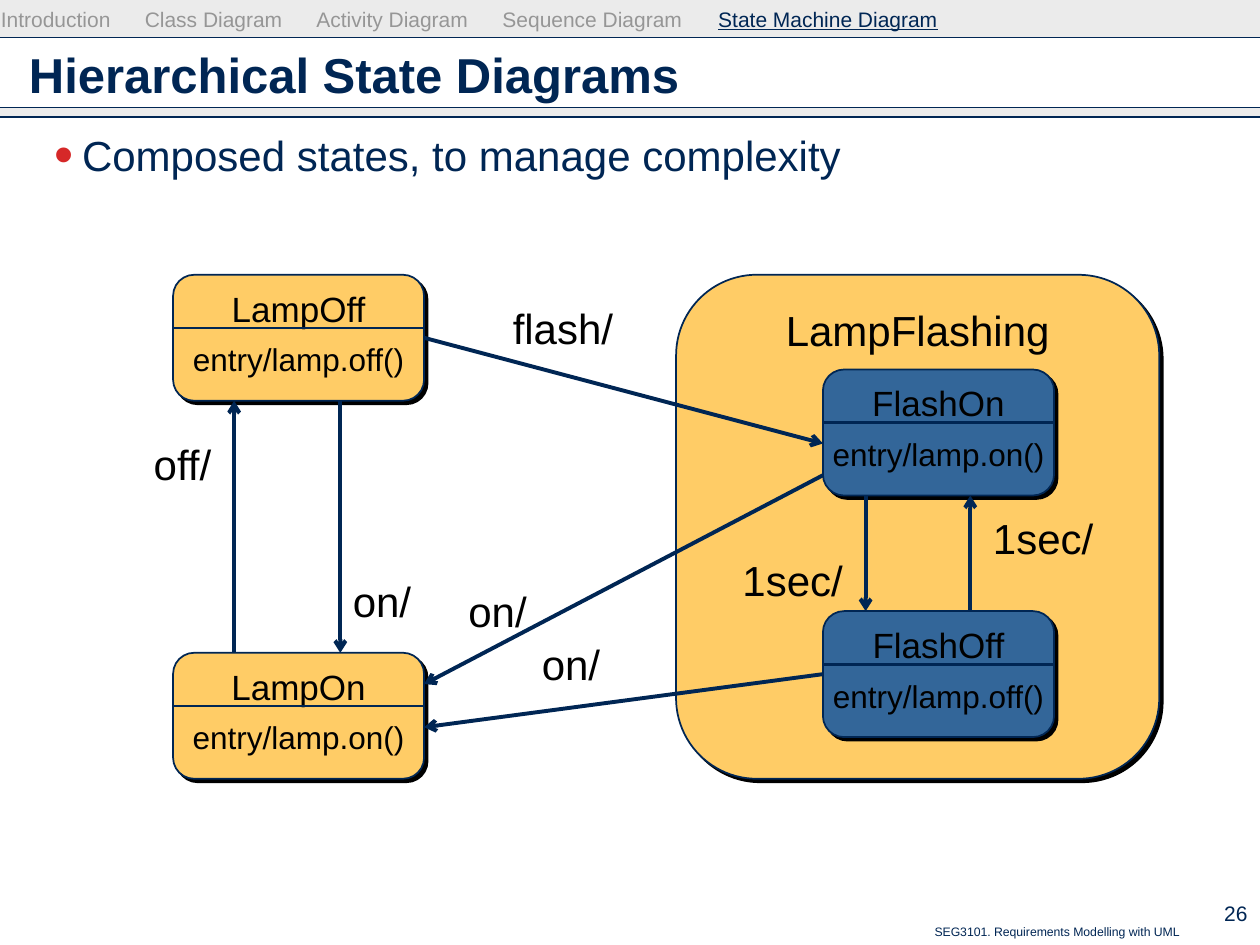
from pptx import Presentation
from pptx.dml.color import RGBColor
from pptx.enum.shapes import MSO_CONNECTOR, MSO_SHAPE
from pptx.enum.text import MSO_ANCHOR, MSO_AUTO_SIZE, PP_ALIGN
from pptx.oxml import parse_xml
from pptx.oxml.ns import nsdecls
from pptx.util import Cm, Pt

STRAIGHT = MSO_CONNECTOR.STRAIGHT
RECTANGLE, ROUNDED = MSO_SHAPE.RECTANGLE, MSO_SHAPE.ROUNDED_RECTANGLE
TOP, MIDDLE = MSO_ANCHOR.TOP, MSO_ANCHOR.MIDDLE
LEFT, CENTER, RIGHT = PP_ALIGN.LEFT, PP_ALIGN.CENTER, PP_ALIGN.RIGHT
NO_AUTOFIT = MSO_AUTO_SIZE.NONE
SIDE_LEFT, SIDE_RIGHT = 1, 3

FONT = "Arial"
COLORS = {
    "navy": "002654", "band": "CDCDCD", "muted": "969696", "bullet": "D62828",
    "amber": "FFCC66", "blue": "336699", "black": "000000",
}
WIDTH, HEIGHT = 25.4, 19.05
STATE_HEIGHT = 2.54
ACTION_WIDTH, ACTION_HEIGHT = 5.2, 1.02
SECTIONS = ["Introduction", "Class Diagram", "Activity Diagram",
            "Sequence Diagram", "State Machine Diagram"]
SECTION_TABS = [2.9, 6.36, 10.11, 14.46]

STATES = [
    ("LampOff", "entry/lamp.off()", 3.49, 5.54, 5.06, "amber"),
    ("LampOn", "entry/lamp.on()", 3.49, 13.16, 5.06, "amber"),
    ("FlashOn", "entry/lamp.on()", 16.59, 7.45, 4.66, "blue"),
    ("FlashOff", "entry/lamp.off()", 16.59, 12.32, 4.66, "blue"),
]
TRANSITIONS = [
    ((8.55, 6.81), (16.59, 8.94), "flash/", (11.35, 6.6)),
    ((17.45, 9.99), (17.45, 12.32), "1sec/", (15.98, 11.68)),
    ((19.56, 12.32), (19.56, 9.99), "1sec/", (21.03, 10.85)),
    ((4.72, 13.16), (4.72, 8.08), "off/", (3.68, 9.35)),
    ((6.86, 8.08), (6.86, 13.16), "on/", (7.7, 12.12)),
    ((16.59, 13.59), (8.55, 14.66), "on/", (11.51, 13.39)),
    ((16.59, 9.58), (8.55, 13.79), "on/", (10.03, 12.32)),
]


def rgb(name):
    """Return the named colour."""
    return RGBColor.from_string(COLORS[name])


def format_font(font, size, color, bold=False):
    """Set the face, size, colour and weight of a font."""
    font.name, font.size, font.bold = FONT, Pt(size), bold
    font.color.rgb = rgb(color)


def write(shape, text, size, color, align=CENTER, anchor=MIDDLE, wrap=False):
    """Write one formatted paragraph into a shape and return it."""
    frame = shape.text_frame
    frame.text = text
    frame.word_wrap = wrap
    frame.vertical_anchor = anchor
    paragraph = frame.paragraphs[0]
    paragraph.alignment = align
    for run in paragraph.runs:
        format_font(run.font, size, color)
    return paragraph


def add_label(slide, text, box, size, color, align=CENTER, anchor=MIDDLE):
    """Add an unwrapped text box."""
    label = slide.shapes.add_textbox(*map(Cm, box))
    write(label, text, size, color, align, anchor)


def add_line(slide, start, end, width, arrow=False):
    """Add a straight line, with an arrowhead at its end if asked."""
    line = slide.shapes.add_connector(STRAIGHT, *map(Cm, start + end))
    line.line.color.rgb = rgb("navy")
    line.line.width = Pt(width)
    if arrow:
        line.line._get_or_add_ln().append(
            parse_xml(f'<a:tailEnd {nsdecls("a")} type="arrow"/>'))
    line._element.spPr.append(parse_xml(f'<a:effectLst {nsdecls("a")}/>'))
    return line


def add_band(slide, top, height):
    """Add a translucent band across the slide."""
    band = slide.shapes.add_shape(RECTANGLE, 0, Cm(top), Cm(WIDTH), Cm(height))
    band.shadow.inherit = False
    band.fill.solid()
    band.fill.fore_color.rgb = rgb("band")
    band.line.fill.background()
    color = band._element.spPr.find(".//{*}srgbClr")
    color.append(parse_xml(f'<a:alpha {nsdecls("a")} val="40000"/>'))


def add_rounded_box(slide, name, box, fill, size):
    """Add a named rounded box with a hard shadow."""
    shape = slide.shapes.add_shape(ROUNDED, *map(Cm, box))
    shape.adjustments[0] = 0.167
    shape.fill.solid()
    shape.fill.fore_color.rgb = rgb(fill)
    shape.line.color.rgb = rgb("navy")
    shape.line.width = Pt(1)
    shape._element.spPr.append(parse_xml(
        f'<a:effectLst {nsdecls("a")}><a:outerShdw dist="{Pt(2.8)}" dir="2700000" '
        f'algn="ctr" rotWithShape="0"><a:srgbClr val="{COLORS["black"]}"/>'
        '</a:outerShdw></a:effectLst>'))
    write(shape, name, size, "black", anchor=TOP)
    return shape


def add_state(slide, name, action, left, top, width, fill):
    """Add a state with its name, divider and entry action."""
    box = (left, top, width, STATE_HEIGHT)
    shape = add_rounded_box(slide, name, box, fill, 20)
    divider = top + 1.07
    add_line(slide, (left, divider), (left + width, divider), 1.5)
    action_left = left + (width - ACTION_WIDTH) / 2
    action_box = (action_left, top + 1.19, ACTION_WIDTH, ACTION_HEIGHT)
    add_label(slide, action, action_box, 18, "black")
    return shape


def add_transition(slide, start, end, text, center):
    """Add an arrow and its label, which is centred on a point."""
    arrow = add_line(slide, start, end, 2.25, arrow=True)
    width, height = 2.54, 1.27
    x, y = center
    box = (x - width / 2, y - height / 2, width, height)
    add_label(slide, text, box, 24, "black")
    return arrow


def add_navigation(slide):
    """Add the section names, with the current one underlined."""
    bar = slide.shapes.add_textbox(0, Cm(0.13), Cm(20), Cm(0.64))
    frame = bar.text_frame
    frame.margin_left = Cm(0.02)
    frame.margin_top = 0
    paragraph = write(bar, "", 12, "muted", LEFT, TOP, wrap=True)
    tabs = "".join(f'<a:tab pos="{Cm(tab)}" algn="l"/>' for tab in SECTION_TABS)
    paragraph._p.get_or_add_pPr().append(
        parse_xml(f'<a:tabLst {nsdecls("a")}>{tabs}</a:tabLst>'))
    others = paragraph.add_run()
    others.text = "\t".join(SECTIONS[:-1]) + "\t"
    format_font(others.font, 12, "muted")
    current = paragraph.add_run()
    current.text = SECTIONS[-1]
    format_font(current.font, 12, "navy")
    current.font.underline = True


def place(placeholder, box):
    """Move a placeholder and turn off its text fitting."""
    placeholder.left, placeholder.top, placeholder.width, placeholder.height = map(Cm, box)
    placeholder.text_frame.auto_size = NO_AUTOFIT


def fill_placeholders(slide):
    """Fill the title and the bulleted body."""
    title, body = slide.shapes.title, slide.placeholders[1]
    place(title, (0.33, 0.64, 24.74, 1.68))
    paragraph = write(title, "Hierarchical State Diagrams", 28, "navy", LEFT, wrap=True)
    paragraph.runs[0].font.bold = True
    place(body, (0.33, 2.59, 24.74, 15.49))
    paragraph = write(body, "Composed states, to manage complexity", 24, "navy",
                      LEFT, TOP, wrap=True)
    paragraph.line_spacing = Pt(26)
    paragraph.space_before = Pt(0)
    properties = paragraph._p.get_or_add_pPr()
    properties.set("marL", str(Cm(1.07)))
    properties.set("indent", str(Cm(-0.56)))
    for bullet in (f'<a:buClr {nsdecls("a")}><a:srgbClr val="{COLORS["bullet"]}"/></a:buClr>',
                   f'<a:buSzPct {nsdecls("a")} val="130000"/>',
                   f'<a:buFont {nsdecls("a")} typeface="{FONT}"/>',
                   f'<a:buChar {nsdecls("a")} char="•"/>'):
        properties.append(parse_xml(bullet))


def main():
    """Build the slide and save it."""
    presentation = Presentation()
    presentation.slide_width, presentation.slide_height = Cm(WIDTH), Cm(HEIGHT)
    slide = presentation.slides.add_slide(presentation.slide_layouts[1])
    fill_placeholders(slide)
    add_band(slide, 0, 0.76)
    add_band(slide, 2.16, 0.18)
    for y in (0.76, 2.16, 2.36):
        add_line(slide, (0, y), (WIDTH, y), 0.75)
    add_navigation(slide)
    add_rounded_box(slide, "LampFlashing", (13.63, 5.54, 9.74, 10.16), "amber", 24)
    states = {state[0]: add_state(slide, *state) for state in STATES}
    arrows = [add_transition(slide, *transition) for transition in TRANSITIONS]
    arrows[0].begin_connect(states["LampOff"], SIDE_RIGHT)
    arrows[5].begin_connect(states["FlashOff"], SIDE_LEFT)
    add_label(slide, "SEG3101. Requirements Modelling with UML",
              (8.26, 18.51, 15.77, 0.56), 7, "navy", RIGHT, TOP)
    add_label(slide, "26", (23.62, 17.98, 1.78, 0.86), 12, "navy", RIGHT)
    presentation.save("out.pptx")


if __name__ == "__main__":
    main()
